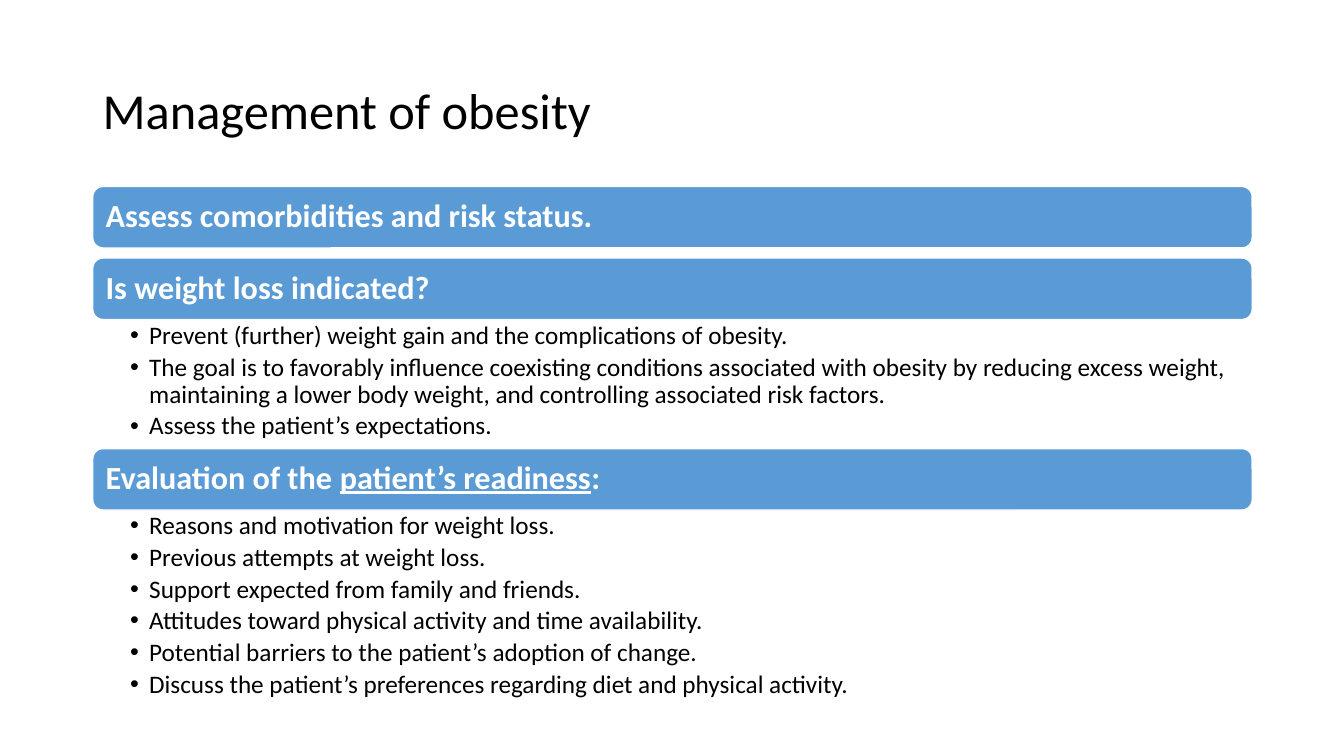
from pptx import Presentation
from pptx.dml.color import RGBColor
from pptx.enum.shapes import MSO_SHAPE
from pptx.enum.text import MSO_ANCHOR, PP_ALIGN
from pptx.oxml.ns import qn
from pptx.util import Emu, Pt
from lxml.etree import SubElement

SCALE = 9144  # EMU in one px, 100 px to the inch


def px(n):
    return Emu(n * SCALE)


def color(code):
    return RGBColor.from_string(code)


def write(para, text, size=18, ink="000000", bold=False, under=False,
          font="Calibri"):
    run = para.add_run()
    run.text = text
    run.font.name = font
    run.font.size = Pt(size)
    run.font.bold = bold
    run.font.underline = under
    run.font.color.rgb = color(ink)


class Deck:
    blue = "5B9BD5"
    white = "FFFFFF"
    left, width = 92, 1150
    indent = 19

    def __init__(self, wide, high):
        self.file = Presentation()
        self.file.slide_width, self.file.slide_height = px(wide), px(high)
        self.slide = self.file.slides.add_slide(self.file.slide_layouts[6])

    def frame(self, shape, pads, anchor):
        frame = shape.text_frame
        frame.word_wrap = True
        frame.vertical_anchor = anchor
        (frame.margin_left, frame.margin_top,
         frame.margin_right, frame.margin_bottom) = map(px, pads)
        return frame

    def box(self, top, high, pads, anchor=MSO_ANCHOR.TOP):
        shape = self.slide.shapes.add_textbox(
            px(self.left), px(top), px(self.width), px(high))
        return self.frame(shape, pads, anchor)

    def title(self, text, top, high):
        para = self.box(top, high, (10, 5, 10, 5),
                        MSO_ANCHOR.MIDDLE).paragraphs[0]
        para.line_spacing = 0.9
        write(para, text, size=36)

    def bar(self, parts, top, high):
        shape = self.slide.shapes.add_shape(
            MSO_SHAPE.ROUNDED_RECTANGLE,
            px(self.left), px(top), px(self.width), px(high))
        shape.shadow.inherit = False
        shape.fill.solid()
        shape.fill.fore_color.rgb = color(self.blue)
        shape.line.color.rgb = color(self.white)
        shape.line.width = Pt(1)
        frame = self.frame(shape, (10, 10, 10, 10), MSO_ANCHOR.MIDDLE)
        para = frame.paragraphs[0]
        para.alignment = PP_ALIGN.LEFT
        para.line_spacing = 0.9
        for text, under in parts:
            write(para, text, size=23, ink=self.white, bold=True, under=under)

    def points(self, items, top, high):
        frame = self.box(top, high, (37, 3, 14, 3))
        for i, text in enumerate(items):
            para = frame.add_paragraph() if i else frame.paragraphs[0]
            para.level = 1
            para.line_spacing = 0.9
            para.space_after = Pt(3.2)
            props = para._p.get_or_add_pPr()
            props.set("marL", str(px(self.indent)))
            props.set("indent", str(-px(self.indent)))
            SubElement(props, qn("a:buFont")).set("typeface", "Arial")
            SubElement(props, qn("a:buChar")).set("char", "•")
            write(para, text)


# Each section: heading parts (text, underlined), bullets, bullet height
SECTIONS = [
    ([("Assess comorbidities and risk status.", False)], [], 0),
    ([("Is weight loss indicated?", False)], [
        "Prevent (further) weight gain and the complications of obesity.",
        "The goal is to favorably influence coexisting conditions associated "
        "with obesity by reducing excess weight, maintaining a lower body "
        "weight, and controlling associated risk factors.",
        "Assess the patient’s expectations.",
    ], 128),
    ([("Evaluation of the ", False), ("patient’s readiness", True),
      (":", False)], [
        "Reasons and motivation for weight loss.",
        "Previous attempts at weight loss.",
        "Support expected from family and friends.",
        "Attitudes toward physical activity and time availability.",
        "Potential barriers to the patient’s adoption of change.",
        "Discuss the patient’s preferences regarding diet and physical "
        "activity.",
    ], 204),
]
BAR, GAP = 61, 10


def main():
    deck = Deck(1333, 750)
    deck.title("Management of obesity", 40, 145)

    # Stack the sections; a gap follows only a bar without bullets
    top = 185
    for parts, items, high in SECTIONS:
        deck.bar(parts, top, BAR)
        top += BAR
        if items:
            deck.points(items, top, high)
        top += high or GAP

    deck.file.save("out.pptx")


if __name__ == "__main__":
    main()
